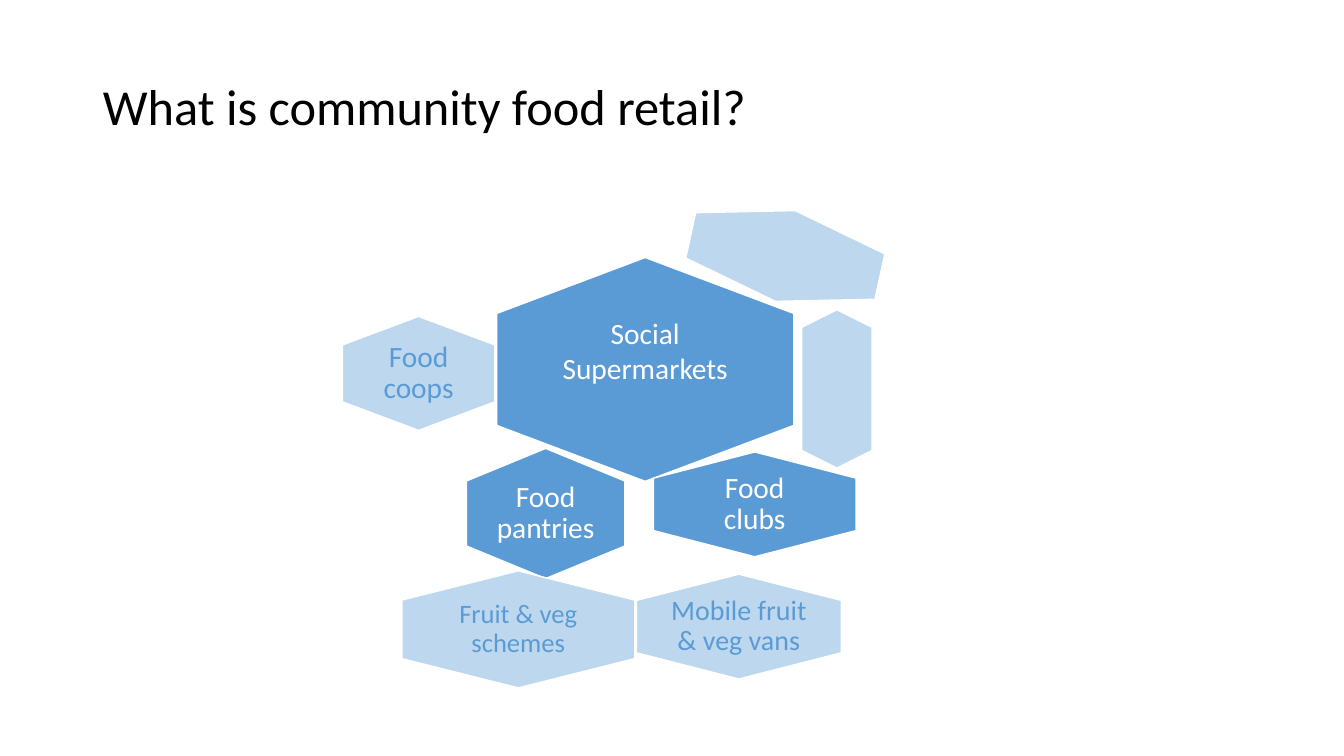
"""Build the slide on kinds of community food retail."""
from pptx import Presentation
from pptx.dml.color import RGBColor
from pptx.enum.shapes import MSO_SHAPE as Shape
from pptx.enum.text import MSO_ANCHOR as Anchor, MSO_AUTO_SIZE as Fit, PP_ALIGN as Align
from pptx.util import Cm, Pt

BLACK = RGBColor(0x00, 0x00, 0x00)
WHITE = RGBColor(0xFF, 0xFF, 0xFF)
BLUE = RGBColor(0x5B, 0x9B, 0xD5)
PALE = RGBColor(0xBD, 0xD7, 0xEE)


def write(par, text, size, color):
    run = par.add_run()
    run.text = text
    run.font.name = "Calibri"
    run.font.size = Pt(size)
    run.font.color.rgb = color


deck = Presentation()
deck.slide_width, deck.slide_height = Cm(33.87), Cm(19.05)
slide = deck.slides.add_slide(deck.slide_layouts[5])

title = slide.shapes.title
title.left, title.top, title.width, title.height = Cm(2.34), Cm(1.55), Cm(29.21), Cm(2.39)
frame = title.text_frame
frame.auto_size = Fit.NONE
frame.word_wrap = True
frame.vertical_anchor = Anchor.MIDDLE
head = frame.paragraphs[0]
head.alignment = Align.LEFT
head.line_spacing = 0.9
write(head, "What is community food retail?", 36, BLACK)

# centre x, centre y, width, height, turn, fill, label
cells = [
    (19.79, 6.45, 2.34, 4.88, 102.3, PALE, None),
    (10.55, 9.41, 2.87, 3.84, 90, PALE, (["Food coops"], 21, 2.54, 1.91, 0, 0, 0.9)),
    (16.26, 9.31, 5.64, 7.49, 90, BLUE,
     (["Social", "Supermarkets"], 21, 5, 3.76, 0.23, 1.2, 1)),
    (21.09, 9.8, 3.99, 1.78, 90, PALE, None),
    (19.02, 12.71, 2.64, 5.11, 90, BLUE, (["Food clubs"], 21, 3.4, 1.75, 0.23, 0.23, 0.9)),
    (13.75, 12.94, 3.28, 3.99, 90, BLUE, (["Food pantries"], 21, 2.67, 2.18, 0, 0, 0.9)),
    (13.06, 15.86, 2.95, 5.87, 90, PALE,
     (["Fruit & veg schemes"], 19, 3.91, 1.96, 0.2, 0.2, 0.9)),
    (18.62, 15.79, 2.64, 5.16, 90, PALE,
     (["Mobile fruit & veg vans"], 20, 3.5, 1.75, 0, 0, 0.9)),
]

comb = slide.shapes.add_group_shape().shapes
for x, y, wide, high, turn, fill, label in cells:
    cell = comb.add_shape(Shape.HEXAGON, Cm(x - wide / 2), Cm(y - high / 2), Cm(wide), Cm(high))
    cell.rotation = turn
    cell.shadow.inherit = False
    cell.fill.solid()
    cell.fill.fore_color.rgb = fill
    cell.line.color.rgb = WHITE
    cell.line.width = Pt(1)
    if label is None:
        continue
    lines, size, wide, high, inset, base, space = label
    box = comb.add_textbox(Cm(x - wide / 2), Cm(y - high / 2), Cm(wide), Cm(high))
    frame = box.text_frame
    frame.word_wrap = True
    frame.vertical_anchor = Anchor.MIDDLE
    frame.margin_left = frame.margin_right = frame.margin_top = Cm(inset)
    frame.margin_bottom = Cm(base)
    for row, line in enumerate(lines):
        par = frame.add_paragraph() if row else frame.paragraphs[0]
        par.alignment = Align.CENTER
        par.line_spacing = space
        write(par, line, size, WHITE if fill == BLUE else BLUE)

deck.save("out.pptx")
